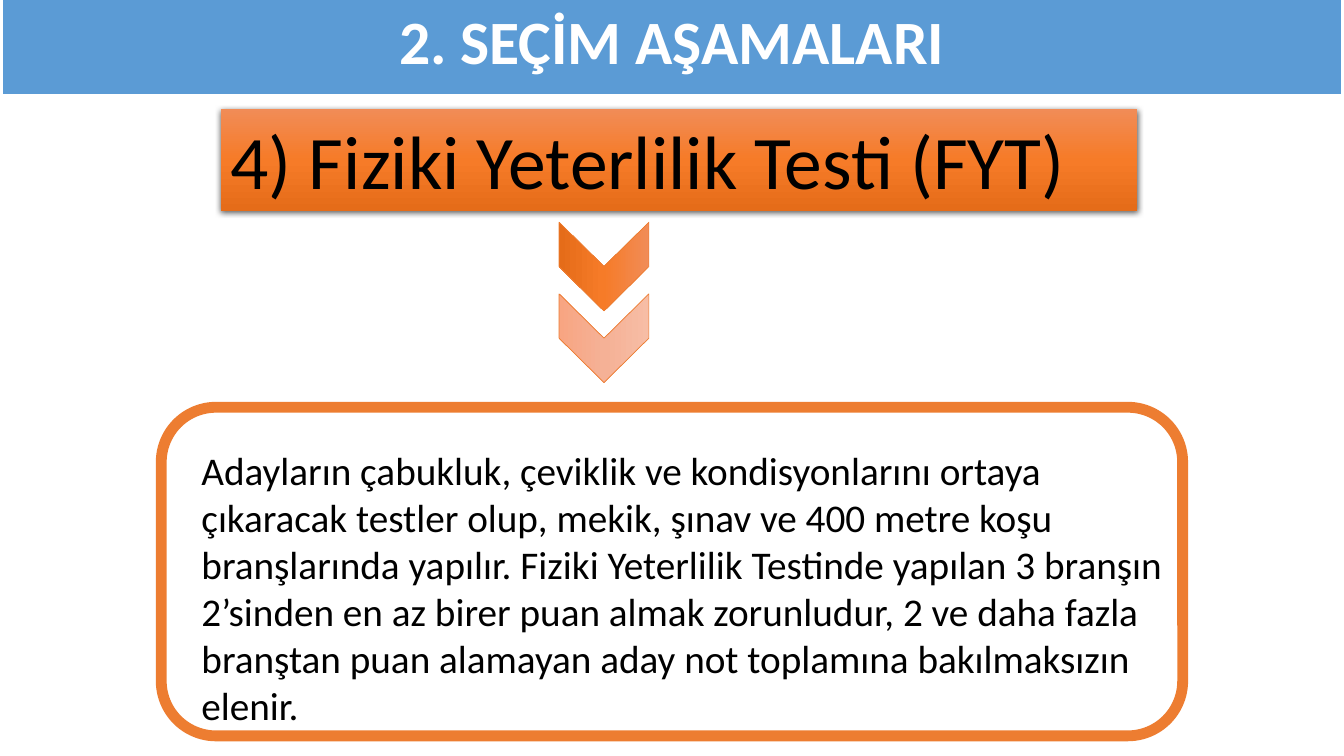
from copy import deepcopy
from dataclasses import dataclass

from lxml.etree import SubElement
from pptx import Presentation
from pptx.dml.color import RGBColor
from pptx.enum.shapes import MSO_SHAPE
from pptx.enum.text import MSO_ANCHOR, MSO_AUTO_SIZE, PP_ALIGN
from pptx.oxml.ns import qn
from pptx.util import Inches, Pt


@dataclass(frozen=True)
class Theme:
    font: str = "Calibri"
    white: str = "FFFFFF"
    black: str = "000000"
    blue: str = "5B9BD5"
    orange: str = "ED7D31"
    strong: tuple = ("F18C57", "F67B28", "E56C19")
    pale: tuple = ("F7BDA5", "F5B196", "F8A582")
    title_size: int = 44
    heading_size: int = 54
    body_size: int = 28


class SlideBuilder:
    """Draws styled elements placed by percent of the slide's width and height."""

    def __init__(self, deck, theme):
        self.deck = deck
        self.theme = theme
        self.page = deck.slides.add_slide(deck.slide_layouts[6])

    def place(self, left, top, width, height):
        across, down = self.deck.slide_width / 100, self.deck.slide_height / 100
        return [round(value) for value in (left * across, top * down, width * across, height * down)]

    def shape(self, kind, area, fill, line=None, weight=0, rotation=0):
        box = self.page.shapes.add_shape(kind, *self.place(*area))
        box.shadow.inherit = False
        box.rotation = rotation
        if isinstance(fill, tuple):
            self.gradient(box, fill)
        else:
            box.fill.solid()
            box.fill.fore_color.rgb = RGBColor.from_string(fill)
        if line:
            box.line.color.rgb = RGBColor.from_string(line)
            box.line.width = Pt(weight)
        else:
            box.line.fill.background()
        return box

    def gradient(self, box, colors):
        box.fill.gradient()
        box.fill.gradient_angle = 270
        stop_list = box._element.spPr.find(qn("a:gradFill")).find(qn("a:gsLst"))
        stop_list.append(deepcopy(stop_list[-1]))
        for index, (stop, color) in enumerate(zip(box.fill.gradient_stops, colors)):
            stop.position = index / (len(colors) - 1)
            stop.color.rgb = RGBColor.from_string(color)

    def drop_shadow(self, box, blur, distance, opacity):
        effects = box._element.spPr.find(qn("a:effectLst"))
        shadow = SubElement(effects, qn("a:outerShdw"), blurRad=str(Pt(blur)),
                            dist=str(Pt(distance)), dir="5400000", rotWithShape="0")
        color = SubElement(shadow, qn("a:srgbClr"), val=self.theme.black)
        SubElement(color, qn("a:alpha"), val=str(opacity * 1000))

    def text_box(self, area):
        return self.page.shapes.add_textbox(*self.place(*area))

    def add_text(self, box, text, size, color, bold=False, frame_format=None, para_format=None):
        frame = box.text_frame
        para = frame.paragraphs[0]
        span = para.add_run()
        span.text = text
        span.font.color.rgb = RGBColor.from_string(color)
        formats = (
            (frame, {"word_wrap": True, "vertical_anchor": MSO_ANCHOR.TOP, **(frame_format or {})}),
            (para, {"alignment": PP_ALIGN.LEFT, **(para_format or {})}),
            (span.font, {"name": self.theme.font, "size": Pt(size), "bold": bold}),
        )
        for target, values in formats:
            for name, value in values.items():
                setattr(target, name, value)


def main():
    deck = Presentation()
    deck.slide_width, deck.slide_height = Inches(13.33), Inches(7.5)
    theme = Theme()
    slide = SlideBuilder(deck, theme)
    growing = {"auto_size": MSO_AUTO_SIZE.SHAPE_TO_FIT_TEXT}

    slide.shape(MSO_SHAPE.ROUNDED_RECTANGLE, (12, 53.87, 76, 43.47),
                theme.white, theme.orange, 7.75)

    title = slide.shape(MSO_SHAPE.RECTANGLE, (0.15, -0.67, 99.7, 13.2),
                        theme.blue, theme.white, 1.5)
    slide.add_text(title, "2. SEÇİM AŞAMALARI", theme.title_size, theme.white, bold=True,
                   frame_format={"vertical_anchor": MSO_ANCHOR.MIDDLE},
                   para_format={"alignment": PP_ALIGN.CENTER, "line_spacing": 0.9})

    for top, colors in ((38.8, theme.pale), (29.33, theme.strong)):
        slide.shape(MSO_SHAPE.CHEVRON, (41.64, top, 6.6, 11.87),
                    colors, theme.orange, 0.5, rotation=90)

    heading = slide.shape(MSO_SHAPE.RECTANGLE, (16.43, 14.4, 68.19, 13.47), theme.strong)
    slide.drop_shadow(heading, blur=4.5, distance=1.5, opacity=63)
    slide.add_text(heading, "4) Fiziki Yeterlilik Testi (FYT)", theme.heading_size,
                   theme.black, frame_format=growing)

    body = slide.text_box((14.25, 58.4, 73.74, 39.07))
    slide.add_text(
        body,
        "Adayların çabukluk, çeviklik ve kondisyonlarını ortaya çıkaracak testler olup, "
        "mekik, şınav ve 400 metre koşu branşlarında yapılır. Fiziki Yeterlilik Testinde "
        "yapılan 3 branşın 2’sinden en az birer puan almak zorunludur, 2 ve daha fazla "
        "branştan puan alamayan aday not toplamına bakılmaksızın elenir.",
        theme.body_size, theme.black, frame_format=growing)

    deck.save("out.pptx")


if __name__ == "__main__":
    main()
